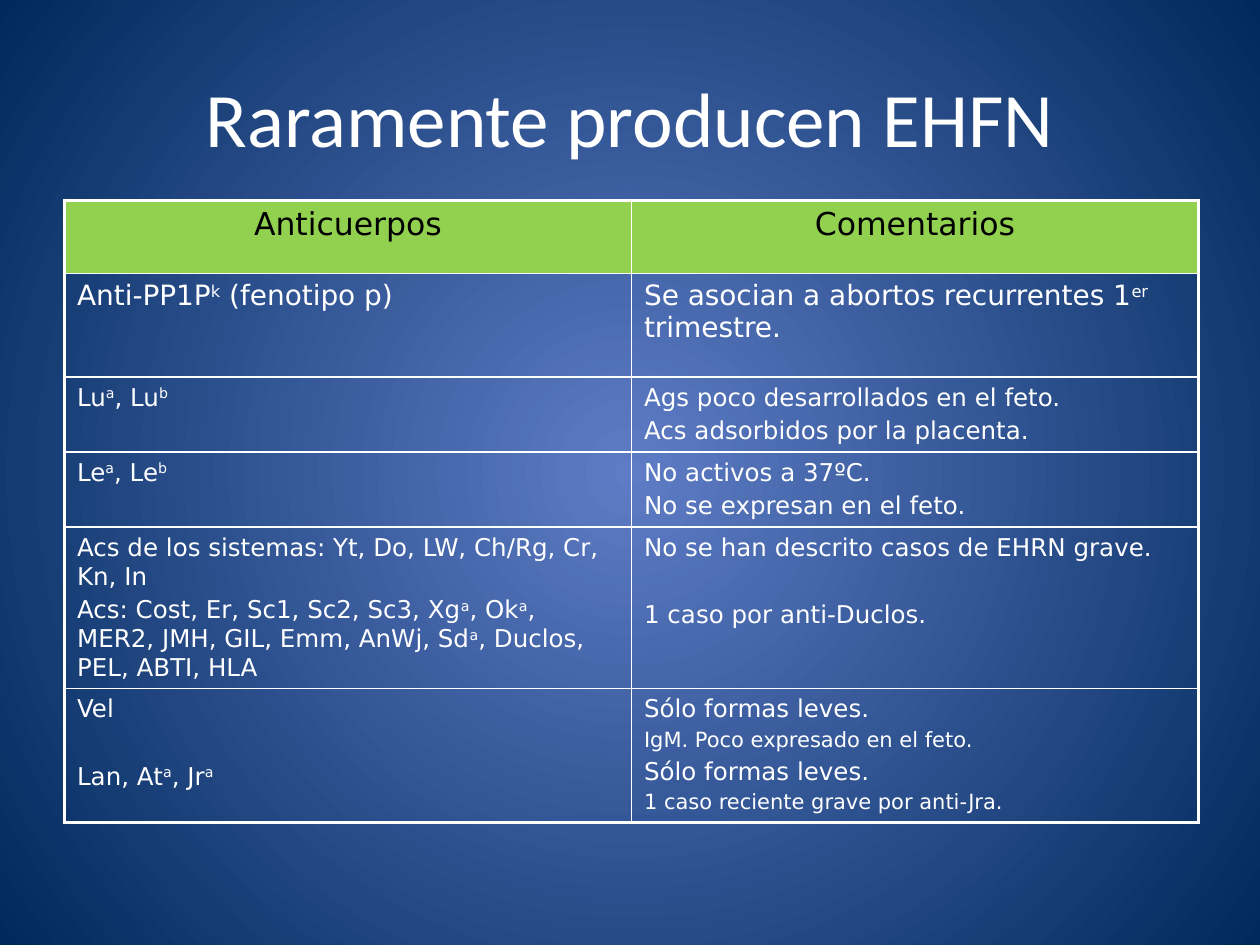
from dataclasses import dataclass

import pptx
import pptx.dml.color
import pptx.dml.fill
import pptx.enum.text
import pptx.oxml
import pptx.oxml.ns
import pptx.table
import pptx.text.text
import pptx.util

Cm = pptx.util.Cm
Pt = pptx.util.Pt
ALIGN = pptx.enum.text.PP_ALIGN
WHITE, BLACK, GREEN = "FFFFFF", "000000", "92D050"
GLOW, NAVY = "5E7CC5", "00295C"
BODY_FONT = "DejaVu Sans"
OUTER, INNER = 2.25, 1
GAP = 22


@dataclass(frozen=True)
class Line:
    text: str
    size: int = 14
    before: float | None = None


@dataclass(frozen=True)
class Entry:
    height: float
    antibodies: tuple[Line, ...]
    comments: tuple[Line, ...]


ENTRIES = [
    Entry(1.47, (Line("Anticuerpos", 18),), (Line("Comentarios", 18),)),
    Entry(2.09, (Line("Anti-PP1P^k^ (fenotipo p)", 16),),
          (Line("Se asocian a abortos recurrentes 1^er^ trimestre.", 16),)),
    Entry(1.51, (Line("Lu^a^, Lu^b^"),),
          (Line("Ags poco desarrollados en el feto."),
           Line("Acs adsorbidos por la placenta."))),
    Entry(1.51, (Line("Le^a^, Le^b^"),),
          (Line("No activos a 37ºC."), Line("No se expresan en el feto."))),
    Entry(3.25,
          (Line("Acs de los sistemas: Yt, Do, LW, Ch/Rg, Cr, Kn, In"),
           Line("Acs: Cost, Er, Sc1, Sc2, Sc3, Xg^a^, Ok^a^, MER2, JMH, GIL, "
                "Emm, AnWj, Sd^a^, Duclos, PEL, ABTI, HLA")),
          (Line("No se han descrito casos de EHRN grave."),
           Line("1 caso por anti-Duclos.", before=GAP))),
    Entry(2.7, (Line("Vel"), Line("Lan, At^a^, Jr^a^", before=GAP)),
          (Line("Sólo formas leves."),
           Line("IgM. Poco expresado en el feto.", 12),
           Line("Sólo formas leves."),
           Line("1 caso reciente grave por anti-Jra.", 12))),
]


def rgb(color: str) -> pptx.dml.color.RGBColor:
    return pptx.dml.color.RGBColor.from_string(color)


def add_run(paragraph: pptx.text.text._Paragraph, text: str, size: int,
            font: str, color: str, raised: bool = False) -> None:
    run = paragraph.add_run()
    run.text = text
    run.font.size = Pt(size)
    run.font.name = font
    run.font.color.rgb = rgb(color)
    if raised:
        run._r.get_or_add_rPr().set("baseline", "30000")


def write_lines(cell: pptx.table._Cell, lines: tuple[Line, ...],
                color: str, alignment: ALIGN) -> None:
    frame = cell.text_frame
    for index, line in enumerate(lines):
        paragraph = frame.add_paragraph() if index else frame.paragraphs[0]
        paragraph.alignment = alignment
        paragraph.space_before = Pt(line.before or 0.2 * line.size)
        for part, text in enumerate(line.text.split("^")):
            if text:
                add_run(paragraph, text, line.size, BODY_FONT, color, part % 2 == 1)


def draw_borders(cell: pptx.table._Cell, widths: dict[str, float]) -> None:
    properties = cell._tc.get_or_add_tcPr()
    for side, width in widths.items():
        properties.append(pptx.oxml.parse_xml(
            f'<a:ln{side} {pptx.oxml.ns.nsdecls("a")} w="{Pt(width)}">'
            f'<a:solidFill><a:srgbClr val="{WHITE}"/></a:solidFill></a:ln{side}>'))


def paint_background(slide: pptx.slide.Slide) -> None:
    fill = slide.background.fill
    fill.gradient()
    for stop, color in zip(fill.gradient_stops, (GLOW, NAVY)):
        stop.color.rgb = rgb(color)
    gradient = slide.element.find(".//" + pptx.oxml.ns.qn("a:gradFill"))
    linear = gradient.find(pptx.oxml.ns.qn("a:lin"))
    gradient.replace(linear, pptx.oxml.parse_xml(
        f'<a:path {pptx.oxml.ns.nsdecls("a")} path="circle">'
        '<a:fillToRect l="50000" t="50000" r="50000" b="50000"/></a:path>'))


def add_title(slide: pptx.slide.Slide, text: str) -> None:
    heading = slide.shapes.title
    heading.left, heading.top = Cm(1.27), Cm(0.76)
    heading.width, heading.height = Cm(22.86), Cm(3.18)
    heading.text_frame.vertical_anchor = pptx.enum.text.MSO_ANCHOR.MIDDLE
    paragraph = heading.text_frame.paragraphs[0]
    paragraph.alignment = ALIGN.CENTER
    add_run(paragraph, text, 44, "Calibri", WHITE)


def add_antibody_table(slide: pptx.slide.Slide, entries: list[Entry]) -> None:
    total = sum(entry.height for entry in entries)
    table = slide.shapes.add_table(len(entries), 2, Cm(1.3), Cm(4.04),
                                   Cm(22.86), Cm(total)).table
    table.first_row = table.horz_banding = False
    for row, entry in enumerate(entries):
        table.rows[row].height = Cm(entry.height)
        header = row == 0
        for column, lines in enumerate((entry.antibodies, entry.comments)):
            cell = table.cell(row, column)
            write_lines(cell, lines, BLACK if header else WHITE,
                        ALIGN.CENTER if header else ALIGN.LEFT)
            draw_borders(cell, {
                "L": OUTER if column == 0 else INNER,
                "R": OUTER if column == 1 else INNER,
                "T": OUTER if header else INNER,
                "B": OUTER if row == len(entries) - 1 else INNER,
            })
            if header:
                cell.fill.solid()
                cell.fill.fore_color.rgb = rgb(GREEN)
            else:
                cell.fill.background()


def main() -> None:
    presentation = pptx.Presentation()
    presentation.slide_width, presentation.slide_height = Cm(25.4), Cm(19.05)
    slide = presentation.slides.add_slide(presentation.slide_layouts[5])
    paint_background(slide)
    add_title(slide, "Raramente producen EHFN")
    add_antibody_table(slide, ENTRIES)
    presentation.save("out.pptx")


if __name__ == "__main__":
    main()
